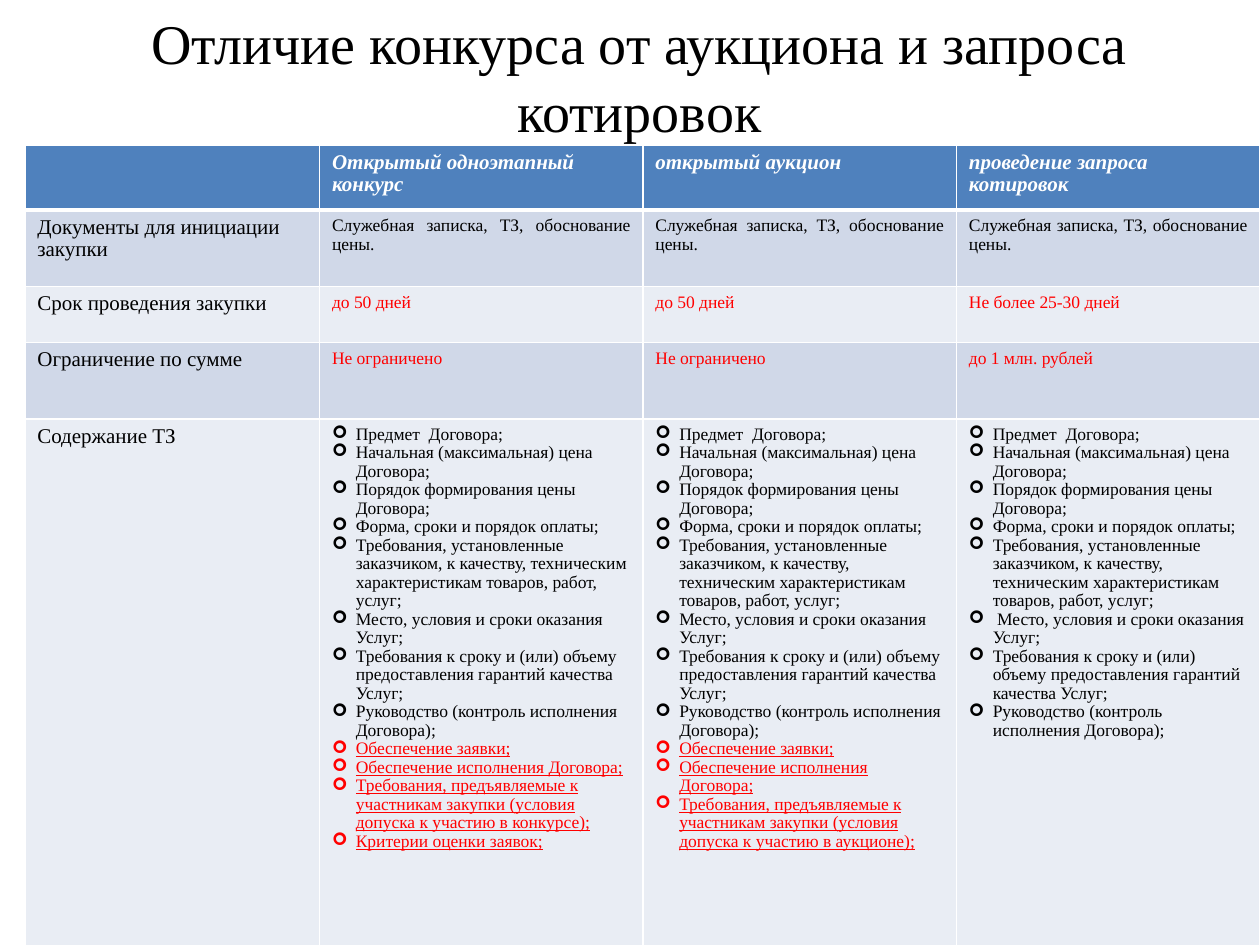
from lxml import etree
from pptx import Presentation
from pptx.dml.color import RGBColor
from pptx.enum.text import MSO_ANCHOR, PP_ALIGN
from pptx.oxml.ns import qn
from pptx.util import Cm, Pt

CENTER, LEFT, JUSTIFY = PP_ALIGN.CENTER, PP_ALIGN.LEFT, PP_ALIGN.JUSTIFY
MIDDLE = MSO_ANCHOR.MIDDLE
FONT = "Times New Roman"
COLORS = {
    "black": "000000",
    "white": "FFFFFF",
    "red": "FF0000",
    "header": "4F81BD",
    "odd": "D0D8E8",
    "even": "E9EDF4",
}

TITLE = "Отличие конкурса от аукциона и запроса котировок"
HEADERS = ["", "Открытый одноэтапный конкурс", "открытый аукцион", "проведение запроса котировок"]
DOCUMENTS = "Служебная записка, ТЗ, обоснование цены."
ROWS = [
    ("Документы для инициации закупки", [DOCUMENTS] * 3, {"align": JUSTIFY}),
    ("Срок проведения закупки", ["до 50 дней", "до 50 дней", "Не более 25-30 дней"], {"color": "red"}),
    ("Ограничение по сумме", ["Не ограничено", "Не ограничено", "до 1 млн. рублей"], {"color": "red"}),
]
CONTENT_LABEL = "Содержание ТЗ"
PLACE = "Место, условия и сроки оказания Услуг;"
COMMON_ITEMS = [
    "Предмет  Договора;",
    "Начальная (максимальная) цена Договора;",
    "Порядок формирования цены Договора;",
    "Форма, сроки и порядок оплаты;",
    "Требования, установленные заказчиком, к качеству, техническим характеристикам товаров, работ, услуг;",
    PLACE,
    "Требования к сроку и (или) объему предоставления гарантий качества Услуг;",
    "Руководство (контроль исполнения Договора);",
]
QUOTATION_ITEMS = [" " + item if item == PLACE else item for item in COMMON_ITEMS]
SECURITY_ITEMS = ["Обеспечение заявки;", "Обеспечение исполнения Договора;"]
ADMISSION = "Требования, предъявляемые к участникам закупки (условия допуска к участию в {});"
CONTENT = [
    (COMMON_ITEMS, SECURITY_ITEMS + [ADMISSION.format("конкурсе"), "Критерии оценки заявок;"]),
    (COMMON_ITEMS, SECURITY_ITEMS + [ADMISSION.format("аукционе")]),
    (QUOTATION_ITEMS, []),
]
COLUMN_WIDTHS = [5.94, 6.52, 6.32, 6.12]
ROW_HEIGHTS = [1.3, 1.55, 1.12, 1.55, 10.61]


def write(paragraph, text, size=10, color="black", bold=False, italic=False,
          underline=False, align=LEFT, spacing=None):
    """Add a formatted run of text to a paragraph."""
    paragraph.alignment = align
    paragraph.line_spacing = spacing
    run = paragraph.add_run()
    run.text = text
    font = run.font
    font.name, font.size = FONT, Pt(size)
    font.bold, font.italic, font.underline = bold, italic, underline
    font.color.rgb = RGBColor.from_string(COLORS[color])


def add_bullet(paragraph):
    """Give a paragraph a hanging arrow bullet."""
    properties = paragraph._p.get_or_add_pPr()
    properties.set("marL", str(Cm(0.48)))
    properties.set("indent", str(-Cm(0.48)))
    etree.SubElement(properties, qn("a:buFont"), typeface="Wingdings")
    etree.SubElement(properties, qn("a:buChar"), char="➢")


def style_cell(cell, fill, top=1, bottom=1):
    """Fill a cell and draw its white borders."""
    properties = cell._tc.get_or_add_tcPr()
    for side, width in (("L", 1), ("R", 1), ("T", top), ("B", bottom)):
        line = etree.SubElement(properties, qn(f"a:ln{side}"), w=str(Pt(width)))
        solid = etree.SubElement(line, qn("a:solidFill"))
        etree.SubElement(solid, qn("a:srgbClr"), val=COLORS["white"])
    cell.fill.solid()
    cell.fill.fore_color.rgb = RGBColor.from_string(COLORS[fill])


def write_list(cell, groups):
    """Write plain items, then underlined red ones, as one bulleted list."""
    formats = ({}, {"color": "red", "underline": True})
    entries = [(item, style) for items, style in zip(groups, formats) for item in items]
    for index, (item, style) in enumerate(entries):
        frame = cell.text_frame
        paragraph = frame.add_paragraph() if index else frame.paragraphs[0]
        write(paragraph, item, spacing=0.96, **style)
        add_bullet(paragraph)


def add_title(slide, left, top, width, height):
    """Place the centred slide title."""
    frame = slide.shapes.add_textbox(left, top, width, height).text_frame
    frame.word_wrap = True
    frame.vertical_anchor = MIDDLE
    write(frame.paragraphs[0], TITLE, size=32, align=CENTER)


def add_comparison(slide, left, top, width, height):
    """Place the table that compares the purchase procedures."""
    table = slide.shapes.add_table(
        len(ROW_HEIGHTS), len(COLUMN_WIDTHS), left, top, width, height).table
    for column, size in zip(table.columns, COLUMN_WIDTHS):
        column.width = int(width * size / sum(COLUMN_WIDTHS))
    for row, size in zip(table.rows, ROW_HEIGHTS):
        row.height = int(height * size / sum(ROW_HEIGHTS))
    for index, row in enumerate(table.rows):
        fill = "header" if index == 0 else "odd" if index % 2 else "even"
        for cell in row.cells:
            style_cell(cell, fill, top=3 if index == 1 else 1, bottom=3 if index == 0 else 1)
    for column, text in enumerate(HEADERS):
        if text:
            write(table.cell(0, column).text_frame.paragraphs[0], text, size=12,
                  color="white", bold=True, italic=True, spacing=0.96)
    labels = [label for label, _, _ in ROWS] + [CONTENT_LABEL]
    for index, label in enumerate(labels, 1):
        write(table.cell(index, 0).text_frame.paragraphs[0], label, size=12, spacing=0.96)
    for index, (_, texts, style) in enumerate(ROWS, 1):
        for column, text in enumerate(texts, 1):
            write(table.cell(index, column).text_frame.paragraphs[0], text, **style)
    for column, groups in enumerate(CONTENT, 1):
        write_list(table.cell(len(ROW_HEIGHTS) - 1, column), groups)


def main():
    """Build and save the slide."""
    presentation = Presentation()
    presentation.slide_width, presentation.slide_height = Cm(25.4), Cm(19.05)
    slide = presentation.slides.add_slide(presentation.slide_layouts[6])
    add_title(slide, Cm(0.69), Cm(0.53), Cm(24.41), Cm(2.01))
    add_comparison(slide, Cm(0.5), Cm(2.93), Cm(24.9), Cm(16.13))
    presentation.save("out.pptx")


if __name__ == "__main__":
    main()
